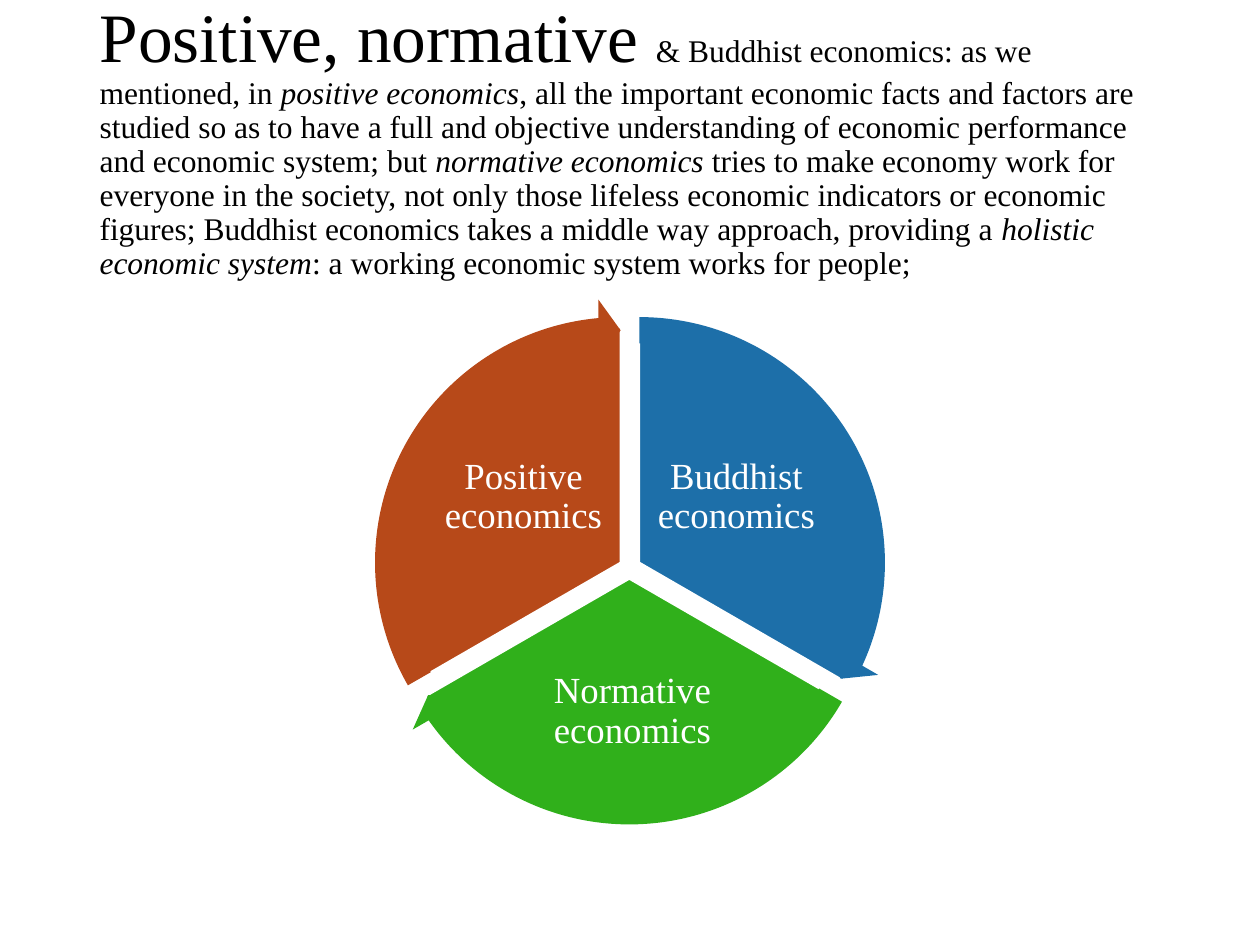
from dataclasses import dataclass

from pptx import Presentation, util as u
from pptx.dml.color import RGBColor
from pptx.enum import shapes, text


@dataclass(frozen=True)
class Theme:
    font: str = "Times New Roman"
    ink: str = "000000"
    paper: str = "FFFFFF"
    blue: str = "1D6FA9"
    green: str = "30B01B"
    rust: str = "B74919"
    heading: float = 39.6
    body: float = 18
    label: float = 21
    spacing: float = 0.9


THEME = Theme()
COLUMNS, ROWS = 100, 75
PIE_SIZE, ARROW_SIZE = 37.3, 41.9

TITLE_SPANS = [
    ("Positive, normative ", dict(size=THEME.heading)),
    ("& Buddhist economics: as we mentioned, in ", {}),
    ("positive economics", dict(italic=True)),
    (", all the important economic facts and factors are studied so as to have "
     "a full and objective understanding of economic performance and economic "
     "system; but ", {}),
    ("normative economics ", dict(italic=True)),
    ("tries to make economy work for everyone in the society, not only those "
     "lifeless economic indicators or economic figures; Buddhist economics takes "
     "a middle way approach, providing a ", {}),
    ("holistic economic system", dict(italic=True)),
    (": a working economic system works for people;", {}),
]

SECTORS = [
    dict(label="Buddhist economics", color=THEME.blue, center=(50.75, 44.65),
         label_area=(51.8, 33.9, 13.3, 11.1), angles=(162, 18),
         arrow_angles=(14.72, 161.99)),
    dict(label="Normative economics", color=THEME.green, center=(49.95, 45.95),
         label_area=(40.2, 51.6, 20, 9.8), angles=(18, 90),
         arrow_angles=(86.72, 18)),
    dict(label="Positive economics", color=THEME.rust, center=(49.25, 44.65),
         label_area=(34.9, 33.9, 13.3, 11.1), angles=(90, 162),
         arrow_angles=(158.73, 90)),
]


def add_span(para, words, size=THEME.body, color=THEME.ink, italic=False):
    span = para.add_run()
    span.text = words
    span.font.name = THEME.font
    span.font.size = u.Pt(size)
    span.font.italic = italic
    span.font.color.rgb = RGBColor.from_string(color)
    return span


class SlideBuilder:
    def __init__(self, deck, theme):
        self.theme = theme
        self.cell_width = deck.slide_width / COLUMNS
        self.cell_height = deck.slide_height / ROWS
        self.page = deck.slides.add_slide(deck.slide_layouts[5])
        self.wheel = None

    def area(self, left, top, width, height):
        return (u.Emu(round(left * self.cell_width)),
                u.Emu(round(top * self.cell_height)),
                u.Emu(round(width * self.cell_width)),
                u.Emu(round(height * self.cell_height)))

    def title(self, spans, area):
        box = self.page.shapes.title
        box.left, box.top, box.width, box.height = self.area(*area)
        frame = box.text_frame
        frame.word_wrap = True
        frame.auto_size = text.MSO_AUTO_SIZE.NONE
        frame.vertical_anchor = text.MSO_ANCHOR.MIDDLE
        para = frame.paragraphs[0]
        para.alignment = text.PP_ALIGN.LEFT
        para.line_spacing = self.theme.spacing
        for words, style in spans:
            add_span(para, words, **style)

    def start_wheel(self):
        self.wheel = self.page.shapes.add_group_shape()

    def round_shape(self, kind, center, size, color, adjustments):
        column, row = center
        area = self.area(column - size / 2, row - size / 2, size, size)
        shape = self.wheel.shapes.add_shape(kind, *area)
        for index, value in enumerate(adjustments):
            shape.adjustments[index] = value
        shape.shadow.inherit = False
        shape.fill.solid()
        shape.fill.fore_color.rgb = RGBColor.from_string(color)
        shape.line.fill.background()
        return shape

    def pie(self, center, color, angles):
        shape = self.round_shape(shapes.MSO_SHAPE.PIE, center, PIE_SIZE, color, angles)
        shape.line.color.rgb = RGBColor.from_string(self.theme.paper)
        shape.line.width = u.Pt(1)

    def arrow(self, center, color, angles):
        self.round_shape(shapes.MSO_SHAPE.CIRCULAR_ARROW, center, ARROW_SIZE, color,
                         (0.05, 3.28, *angles, 0.06))

    def label(self, words, area):
        box = self.wheel.shapes.add_textbox(*self.area(*area))
        frame = box.text_frame
        frame.word_wrap = True
        frame.vertical_anchor = text.MSO_ANCHOR.MIDDLE
        frame.margin_left = frame.margin_right = u.Inches(0.03)
        frame.margin_top = frame.margin_bottom = u.Inches(0.03)
        para = frame.paragraphs[0]
        para.alignment = text.PP_ALIGN.CENTER
        para.line_spacing = self.theme.spacing
        para.space_after = u.Pt(0.35 * self.theme.label)
        add_span(para, words, size=self.theme.label, color=self.theme.paper)


def main():
    deck = Presentation()
    deck.slide_width, deck.slide_height = u.Inches(10), u.Inches(7.5)
    builder = SlideBuilder(deck, THEME)
    builder.title(TITLE_SPANS, (6.9, 4, 86.2, 14.5))
    builder.start_wheel()
    for sector in SECTORS:
        builder.pie(sector["center"], sector["color"], sector["angles"])
        builder.label(sector["label"], sector["label_area"])
    for sector in SECTORS:
        builder.arrow(sector["center"], sector["color"], sector["arrow_angles"])
    deck.save("out.pptx")


if __name__ == "__main__":
    main()
